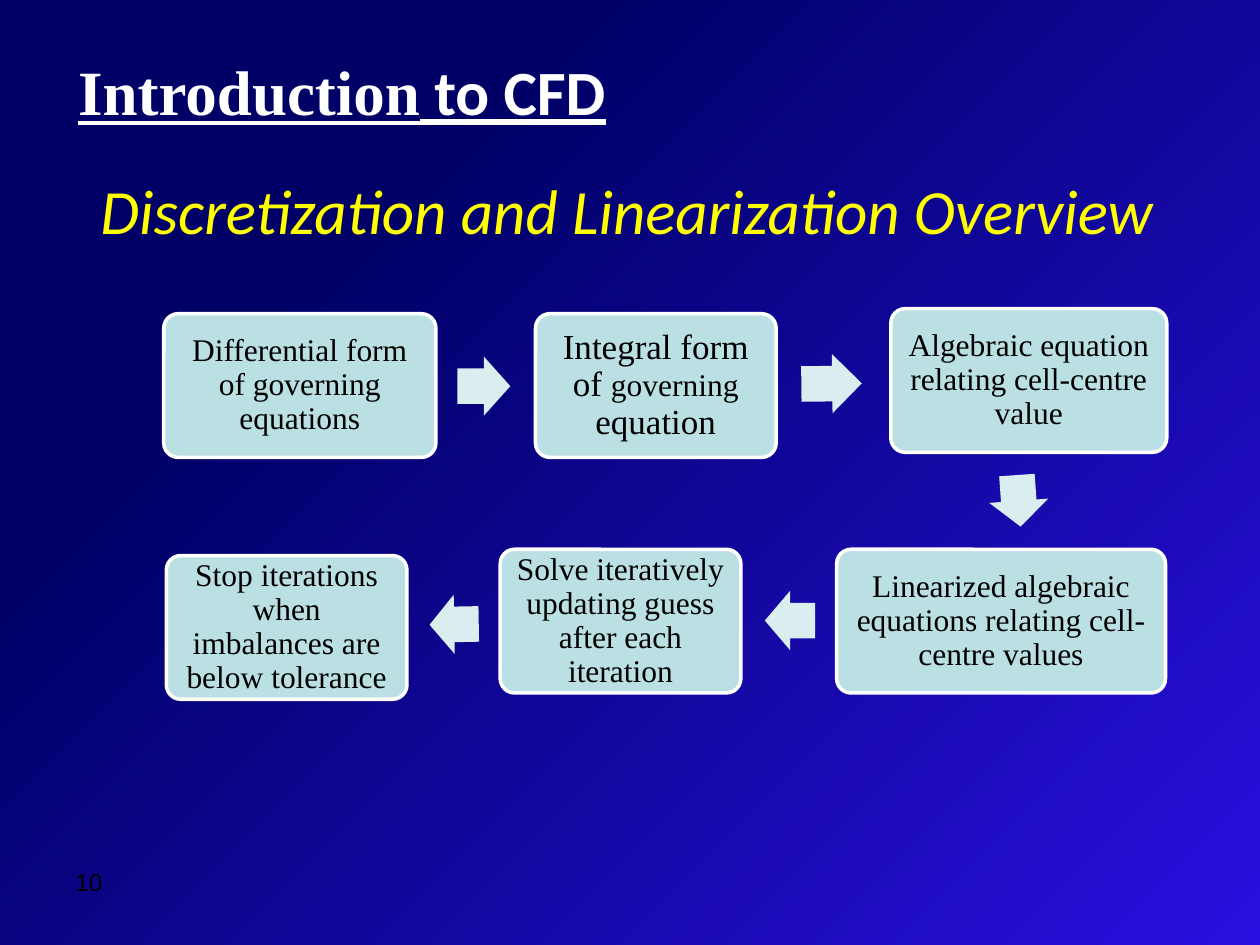
"""Build the discretization and linearization overview slide."""
import pptx
import pptx.util
import pptx.dml.color
import pptx.enum.shapes
import pptx.enum.text

Inches = pptx.util.Inches
SHAPE = pptx.enum.shapes.MSO_SHAPE
ALIGN = pptx.enum.text.PP_ALIGN
ANCHOR = pptx.enum.text.MSO_ANCHOR

COLORS = {
    "navy": "000066",
    "blue": "2910E0",
    "step": "BBE0E3",
    "arrow": "DAEDEF",
    "white": "FFFFFF",
    "yellow": "FFFF00",
    "black": "000000",
}
SERIF = "Times New Roman"
TITLE = [("Introduction", SERIF, 36), (" to CFD", "Calibri", 36)]
SUBTITLE = [("Discretization and Linearization Overview", "Calibri", 36)]
NUMBER = [("10", "Arial", 14)]

STEP_HEIGHT = 1.14
STEPS = [
    (1.3, 2.49, 2.16, [("Differential form of governing equations", SERIF, 18)]),
    (4.25, 2.49, 1.91, [("Integral form of ", SERIF, 20), ("governing", SERIF, 18),
                        (" equation", SERIF, 20)]),
    (7.07, 2.45, 2.19, [("Algebraic equation relating cell-centre value", SERIF, 18)]),
    (6.64, 4.36, 2.61, [("Linearized algebraic equations relating cell-centre values", SERIF, 18)]),
    (3.97, 4.36, 1.91, [("Solve iteratively updating guess after each iteration", SERIF, 18)]),
    (1.32, 4.41, 1.91, [("Stop iterations when imbalances are below tolerance", SERIF, 18)]),
]
ARROW_HEIGHT = 0.47
ARROWS = [
    (3.63, 2.83, 0.42, 0),
    (6.36, 2.81, 0.48, 359.3),
    (7.88, 3.74, 0.41, 85.9),
    (6.07, 4.69, 0.4, 180),
    (3.41, 4.72, 0.39, 179),
]


def rgb(name):
    return pptx.dml.color.RGBColor.from_string(COLORS[name])


def write(box, spans, color="black", align=ALIGN.LEFT, anchor=ANCHOR.TOP,
          spacing=1.0, inset=None, **style):
    frame = box.text_frame
    frame.word_wrap = True
    frame.auto_size = pptx.enum.text.MSO_AUTO_SIZE.NONE
    frame.vertical_anchor = anchor
    if inset is not None:
        frame.margin_left = frame.margin_right = Inches(inset)
        frame.margin_top = frame.margin_bottom = Inches(inset)
    para = frame.paragraphs[0]
    para.alignment = align
    para.line_spacing = spacing
    for text, font, size in spans:
        span = para.add_run()
        span.text = text
        span.font.name = font
        span.font.size = pptx.util.Pt(size)
        span.font.color.rgb = rgb(color)
        for key, value in style.items():
            setattr(span.font, key, value)


def add_shape(page, kind, place, fill, adjustments):
    shape = page.shapes.add_shape(kind, *map(Inches, place))
    shape.shadow.inherit = False
    shape.fill.solid()
    shape.fill.fore_color.rgb = rgb(fill)
    shape.line.fill.background()
    for index, value in enumerate(adjustments):
        shape.adjustments[index] = value
    return shape


def paint_background(page):
    fill = page.background.fill
    fill.gradient()
    fill.gradient_angle = 315
    for stop, (position, color) in zip(fill.gradient_stops, [(0.26, "navy"), (1, "blue")]):
        stop.position = position
        stop.color.rgb = rgb(color)


def main():
    deck = pptx.Presentation()
    deck.slide_width, deck.slide_height = Inches(10), Inches(7.5)
    page = deck.slides.add_slide(deck.slide_layouts[5])
    paint_background(page)

    title = page.shapes.title
    title.left, title.top = Inches(0.52), Inches(0.37)
    title.width, title.height = Inches(6.14), Inches(0.71)
    write(title, TITLE, color="white", bold=True, underline=True)

    subtitle = page.shapes.add_textbox(*map(Inches, (0.5, 1.31, 8.95, 0.8)))
    write(subtitle, SUBTITLE, color="yellow", align=ALIGN.CENTER, italic=True)

    for left, top, width, spans in STEPS:
        step = add_shape(page, SHAPE.ROUNDED_RECTANGLE,
                         (left, top, width, STEP_HEIGHT), "step", [0.1])
        step.line.color.rgb = rgb("white")
        step.line.width = pptx.util.Pt(2)
        write(step, spans, align=ALIGN.CENTER, anchor=ANCHOR.MIDDLE, spacing=0.9, inset=0.1)

    for left, top, width, angle in ARROWS:
        arrow = add_shape(page, SHAPE.RIGHT_ARROW,
                          (left, top, width, ARROW_HEIGHT), "arrow", [0.6, 0.5])
        arrow.rotation = angle

    number = page.shapes.add_textbox(*map(Inches, (0.5, 6.83, 2.33, 0.52)))
    write(number, NUMBER)
    deck.save("out.pptx")


if __name__ == "__main__":
    main()
